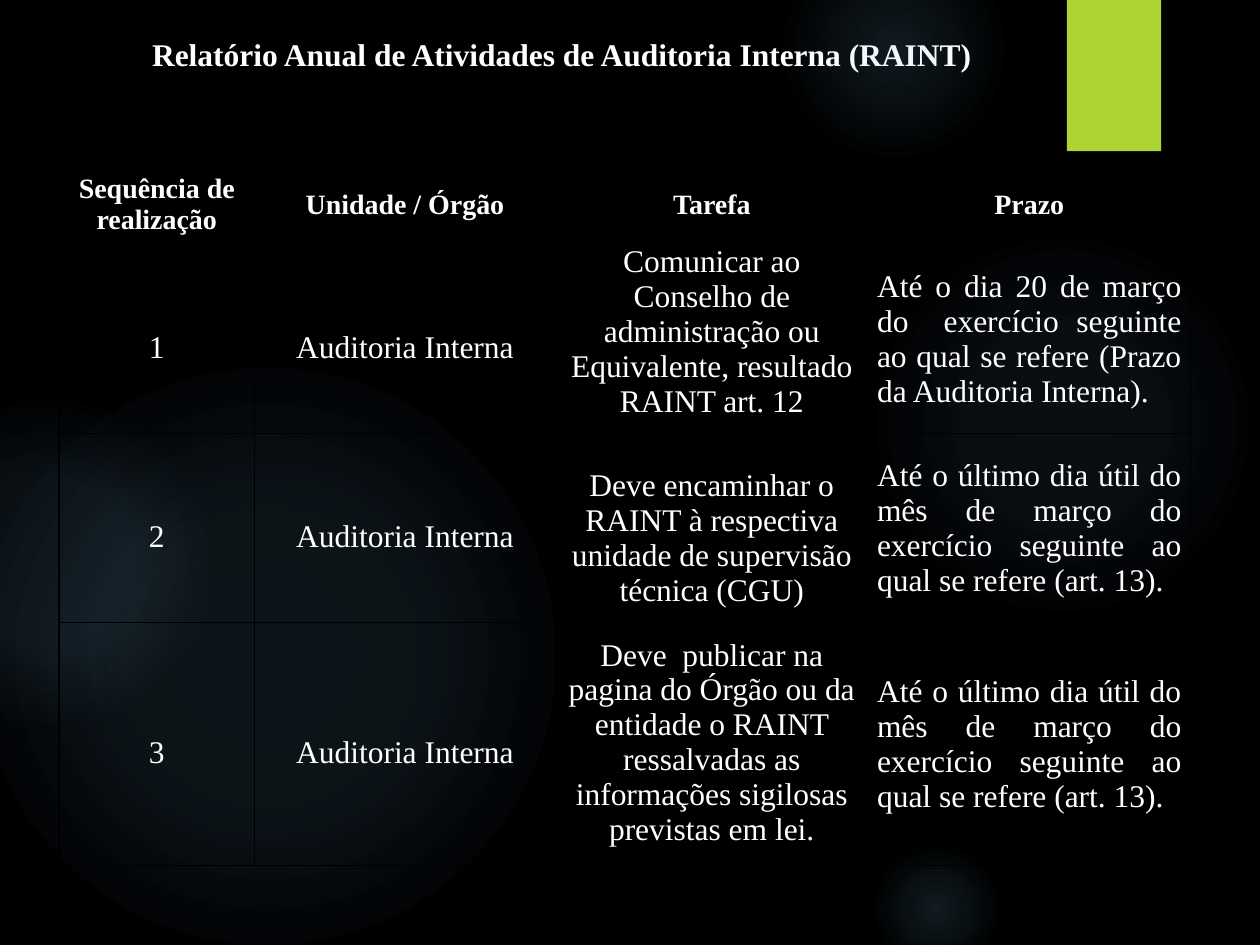
"""Build the RAINT slide: a dark backdrop, a title and two stacked tables."""
from lxml import etree
from pptx import Presentation
from pptx.dml.color import RGBColor
from pptx.enum.shapes import MSO_SHAPE
from pptx.enum.text import MSO_ANCHOR, MSO_AUTO_SIZE, PP_ALIGN
from pptx.oxml import parse_xml
from pptx.oxml.ns import nsdecls
from pptx.util import Cm, Pt

OVAL, RECT = MSO_SHAPE.OVAL, MSO_SHAPE.RECTANGLE
TOP, MIDDLE = MSO_ANCHOR.TOP, MSO_ANCHOR.MIDDLE
CENTER, JUSTIFY = PP_ALIGN.CENTER, PP_ALIGN.JUSTIFY
NO_AUTOSIZE = MSO_AUTO_SIZE.NONE
BLACK = RGBColor(0x00, 0x00, 0x00)
WHITE = RGBColor(0xFF, 0xFF, 0xFF)
LIME = RGBColor(0xAC, 0xD4, 0x33)
GLOW = RGBColor(0x7A, 0xC4, 0xF0)
FONT = "Times New Roman"

COLUMNS = [3.94, 6.07, 6.3, 6.5]
HEADER = ["Sequência de realização", "Unidade / Órgão", "Tarefa", "Prazo"]
UNIT = "Auditoria Interna"
LAST_DAY = ("Até o último dia útil do mês de março do exercício seguinte "
            "ao qual se refere (art. 13).")
STEPS = [
    ["1", UNIT, "Comunicar ao Conselho de administração ou Equivalente, "
     "resultado RAINT art. 12",
     "Até o dia 20 de março do  exercício seguinte ao qual se refere "
     "(Prazo da Auditoria Interna)."],
    ["2", UNIT, "Deve encaminhar o RAINT à respectiva unidade de supervisão "
     "técnica (CGU)", LAST_DAY],
    ["3", UNIT, "Deve  publicar na pagina do Órgão ou da entidade o RAINT "
     "ressalvadas as informações sigilosas previstas em lei.", LAST_DAY],
]


def format_text(p, size, bold, align):
    """Apply the shared look to a paragraph and its runs."""
    p.alignment = align
    for r in p.runs:
        r.font.color.rgb = WHITE
        for name, value in {"name": FONT, "size": Pt(size), "bold": bold}.items():
            setattr(r.font, name, value)


def add_grid(top, rows):
    """Add a table from (height, task top margin, texts) rows."""
    tbl = s.shapes.add_table(len(rows), len(COLUMNS), Cm(1.19), Cm(top),
                             Cm(sum(COLUMNS)), Cm(sum(row[0] for row in rows))).table
    tbl.first_row = tbl.horz_banding = False
    for col, width in zip(tbl.columns, COLUMNS):
        col.width = Cm(width)
    for i, (height, task_top, texts) in enumerate(rows):
        tbl.rows[i].height = Cm(height)
        is_header = texts is HEADER
        for j, text in enumerate(texts):
            cell = tbl.cell(i, j)
            is_task = j == 2 and not is_header
            style = {"margin_left": Cm(0.18), "margin_right": Cm(0.18),
                     "margin_top": Cm(task_top if is_task else 0), "margin_bottom": 0,
                     "vertical_anchor": TOP if is_task else MIDDLE, "text": text}
            for name, value in style.items():
                setattr(cell, name, value)
            cell.fill.background()
            p = cell.text_frame.paragraphs[0]
            format_text(p, 16 if is_header else 18, is_header,
                        JUSTIFY if j == 3 and not is_header else CENTER)
            if j < 2 and not is_header:
                p.line_spacing = 1.5
            tc_pr = cell._tc.get_or_add_tcPr()
            for k, side in enumerate("LRTB"):
                tc_pr.insert(k, parse_xml(
                    f'<a:ln{side} {nsdecls("a")} w="12700"><a:solidFill>'
                    f'<a:srgbClr val="{BLACK}"/></a:solidFill></a:ln{side}>'))


prs = Presentation()
prs.slide_width, prs.slide_height = Cm(25.4), Cm(19.05)
s = prs.slides.add_slide(prs.slide_layouts[5])
s.background.fill.solid()
s.background.fill.fore_color.rgb = BLACK

for left, top, size, stops in [
    (17.5, 4.65, 7.82, [(0, 7), (36, 6), (69, 0)]),
    (15.8, -1.27, 4.45, [(0, 14), (36, 7), (73, 0)]),
    (17.5, 16.94, 2.74, [(0, 14), (36, 7), (66, 0)]),
    (-0.43, 7.42, 11.63, [(0, 11), (36, 10), (75, 0)]),
    (-2.34, 8.05, 6.55, [(0, 8), (36, 8), (72, 0)]),
]:
    sp = s.shapes.add_shape(OVAL, Cm(left), Cm(top), Cm(size), Cm(size))
    sp.shadow.inherit = False
    sp.line.fill.background()
    sp.fill.gradient()
    grad = sp._element.spPr.find("a:gradFill", {"a": nsdecls("a").split('"')[1]})
    gs = "".join(f'<a:gs pos="{pos}000"><a:srgbClr val="{GLOW}">'
                 f'<a:alpha val="{alpha}000"/></a:srgbClr></a:gs>' for pos, alpha in stops)
    grad.getparent().replace(grad, etree.fromstring(
        f'<a:gradFill {nsdecls("a")} rotWithShape="1"><a:gsLst>{gs}</a:gsLst>'
        '<a:path path="circle"><a:fillToRect l="50000" t="50000" r="50000" b="50000"/>'
        '</a:path></a:gradFill>'))

sp = s.shapes.add_shape(RECT, Cm(21.51), 0, Cm(1.9), Cm(3.05))
sp.shadow.inherit = False
sp.line.fill.background()
sp.fill.solid()
sp.fill.fore_color.rgb = LIME

add_grid(3.33, [(1.6, 0, HEADER), (3.81, 0, STEPS[0]), (3.81, 0.71, STEPS[1])])

title = s.shapes.title
for name, value in {"left": Cm(1.27), "top": Cm(0.58),
                    "width": Cm(20.12), "height": Cm(1.02)}.items():
    setattr(title, name, value)
tf = title.text_frame
tf.text = "Relatório Anual de Atividades de Auditoria Interna (RAINT)"
for name, value in {"word_wrap": True, "auto_size": NO_AUTOSIZE,
                    "vertical_anchor": TOP}.items():
    setattr(tf, name, value)
format_text(tf.paragraphs[0], 18, True, CENTER)

add_grid(12.55, [(4.9, 0.31, STEPS[2])])

prs.save("out.pptx")
